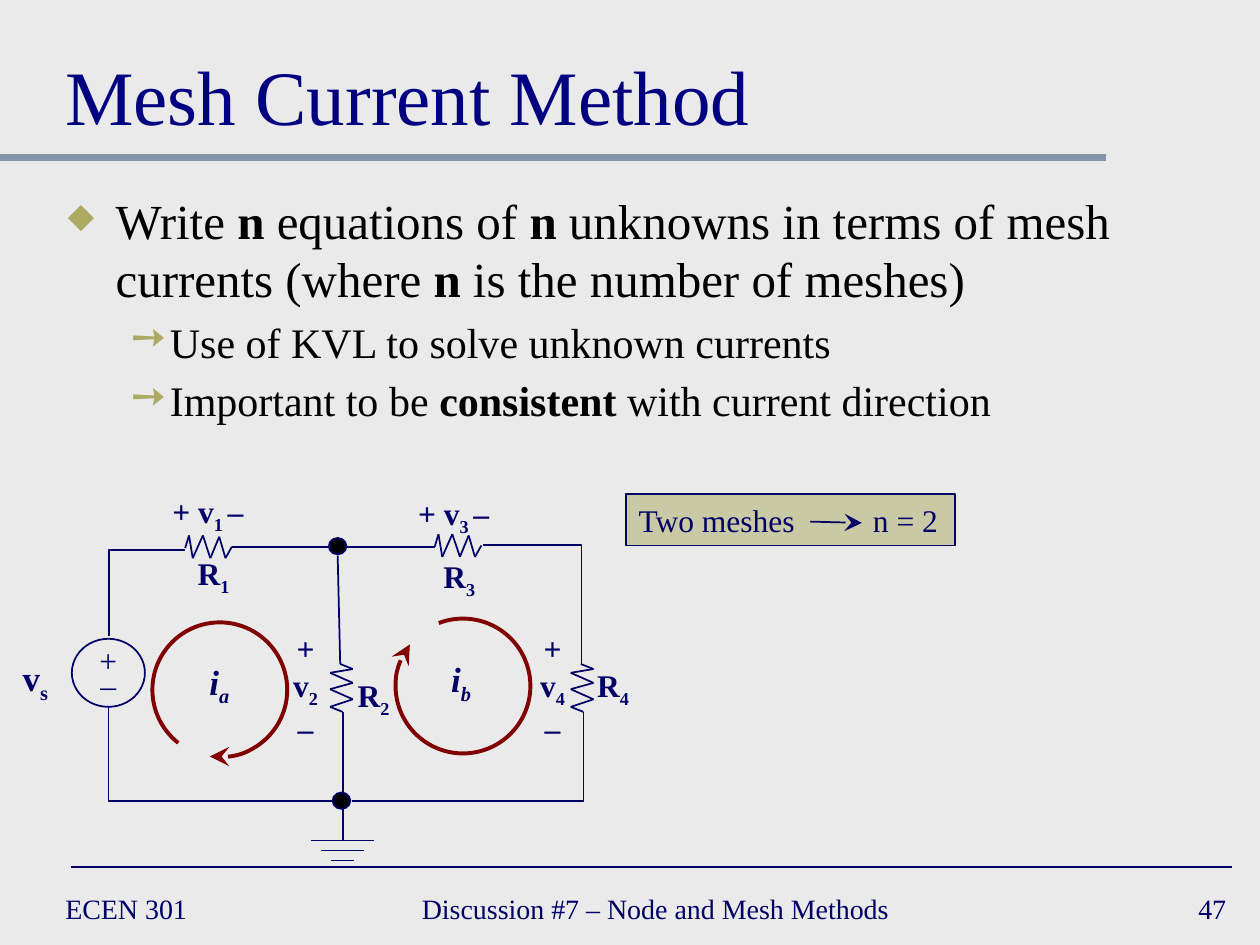
from lxml import etree
from pptx import Presentation, util as u
from pptx.dml import color as colors
from pptx.enum import shapes, text
from pptx.oxml import ns

FONT = "Times New Roman"
NAVY, OLIVE, MAROON, BLACK = "000066", "ACA964", "800000", "000000"
BOLD, SUBSCRIPT = {"bold": True}, {"baseline": -25000}
LEFT, CENTER, RIGHT = text.PP_ALIGN.LEFT, text.PP_ALIGN.CENTER, text.PP_ALIGN.RIGHT
TOP, MIDDLE, BOTTOM = text.MSO_ANCHOR.TOP, text.MSO_ANCHOR.MIDDLE, text.MSO_ANCHOR.BOTTOM
ACROSS = [(0, .1), (.03, 0), (.06, .18), (.14, 0), (.2, .18), (.27, .01), (.32, .18), (.37, .09)]
DOWN = [(.08, 0), (.18, .04), (0, .07), (.18, .15), (0, .2), (.18, .28), (0, .34), (.1, .38)]


def cm(inches):
    """Return a length in inches as a Cm value."""
    return u.Cm(inches * 2.54)


def rgb(value):
    """Return a colour from its hex string."""
    return colors.RGBColor.from_string(value)


def add_child(parent, tag, **attributes):
    """Append a DrawingML element with the given attributes."""
    child = etree.SubElement(parent, ns.qn(tag))
    for name, value in attributes.items():
        child.set(name, str(value))
    return child


def style_line(line, color=NAVY, width=1, arrow=False):
    """Set the colour, width and arrowhead of a line."""
    line.color.rgb = rgb(color)
    line.width = u.Pt(width)
    if arrow:
        add_child(line._get_or_add_ln(), "a:tailEnd", type="stealth", w="lg", len="lg")


def add_line(slide, start, end, **style):
    """Draw a straight line between two points."""
    ends = [cm(value) for value in (*start, *end)]
    connector = slide.shapes.add_connector(shapes.MSO_CONNECTOR.STRAIGHT, *ends)
    style_line(connector.line, **style)
    add_child(connector._element.spPr, "a:effectLst")


def add_bent(slide, box, preset="bentConnector2", adjust=None, **transform):
    """Draw a bent wire in a box that may be turned or flipped."""
    left, top, width, height = box
    ends = [cm(value) for value in (left, top, left + width, top + height)]
    connector = slide.shapes.add_connector(shapes.MSO_CONNECTOR.ELBOW, *ends)
    properties = connector._element.spPr
    geometry = properties.find(ns.qn("a:prstGeom"))
    geometry.set("prst", preset)
    if adjust:
        add_child(geometry.find(ns.qn("a:avLst")), "a:gd", name="adj1", fmla=f"val {adjust}")
    for name, value in transform.items():
        properties.find(ns.qn("a:xfrm")).set(name, str(value))
    style_line(connector.line)
    add_child(properties, "a:effectLst")


def add_zigzag(slide, left, top, offsets):
    """Draw a resistor as a chain of short lines."""
    points = [(left + x, top + y) for x, y in offsets]
    for start, end in zip(points, points[1:]):
        add_line(slide, start, end)


def add_preset(slide, preset, box, fill=None, **style):
    """Add a preset shape with an optional fill."""
    shape = slide.shapes.add_shape(preset, *map(cm, box))
    shape.shadow.inherit = False
    if fill:
        shape.fill.solid()
        shape.fill.fore_color.rgb = rgb(fill)
    else:
        shape.fill.background()
    style_line(shape.line, **style)
    return shape


def add_loop(slide, box, start, end):
    """Draw a mesh current arc, clockwise between two angles in degrees."""
    shape = add_preset(slide, shapes.MSO_SHAPE.ARC, box, color=MAROON, width=2.25, arrow=True)
    for index, angle in enumerate((start, end)):
        shape.adjustments[index] = angle * .6


def add_runs(paragraph, runs, size, color, **common):
    """Add runs, each a text with its own format values."""
    for wording, own in runs:
        run = paragraph.add_run()
        run.text = wording
        values = {"name": FONT, "size": u.Pt(size), **common, **own}
        baseline = values.pop("baseline", None)
        for name, value in values.items():
            setattr(run.font, name, value)
        run.font.color.rgb = rgb(color)
        if baseline:
            run._r.get_or_add_rPr().set("baseline", str(baseline))


def add_text(slide, box, lines, size=18, color=NAVY, align=CENTER, anchor=TOP, wrap=False, **common):
    """Add a text box with one list of runs for each paragraph."""
    frame = slide.shapes.add_textbox(*map(cm, box)).text_frame
    frame.word_wrap = wrap
    frame.vertical_anchor = anchor
    for index, runs in enumerate(lines):
        paragraph = frame.paragraphs[0] if index == 0 else frame.add_paragraph()
        paragraph.alignment = align
        add_runs(paragraph, runs, size, color, **common)
    return frame


def add_body(slide):
    """Add the bulleted text."""
    plain = {}
    lines = [
        [("Write ", plain), ("n", BOLD), (" equations of ", plain), ("n", BOLD),
         (" unknowns in terms of mesh currents (where ", plain), ("n", BOLD),
         (" is the number of meshes)", plain)],
        [("Use of KVL to solve unknown currents", plain)],
        [("Important to be ", plain), ("consistent", BOLD), (" with current direction", plain)],
    ]
    frame = add_text(slide, (.44, 1.46, 9.14, 2.07), lines, 24, BLACK, LEFT, wrap=True)
    for index, paragraph in enumerate(frame.paragraphs):
        level = min(index, 1)
        margin, hanging, mark, percent = [(.38, .38, "◆", 70), (.81, .31, "➙", 100)][level]
        properties = paragraph._p.get_or_add_pPr()
        properties.set("marL", str(cm(margin)))
        properties.set("indent", str(-cm(hanging)))
        add_child(add_child(properties, "a:buClr"), "a:srgbClr", val=OLIVE)
        add_child(properties, "a:buSzPct", val=percent * 1000)
        add_child(properties, "a:buChar", char=mark)
        paragraph.level = level
        if level:
            paragraph.space_before = u.Pt(4.8)
    for run in frame.paragraphs[0].runs:
        run.font.size = u.Pt(28)


def add_wires(slide):
    """Draw the wires, resistors, nodes, source and ground."""
    oval = shapes.MSO_SHAPE.OVAL
    for left, top in [(2.61, 4.27), (2.64, 6.29)]:
        add_preset(slide, oval, (left, top, .14, .13), BLACK)
    add_preset(slide, oval, (.57, 5.07, .58, .54))
    add_bent(slide, (.86, 5.61, 1.78, .75), rot=180 * 60000)
    add_bent(slide, (2.79, 5.65, 1.84, .71), flipV=1)
    add_bent(slide, (.83, 4.41, .67, .6), "bentConnector3", 101800, rot=270 * 60000)
    add_bent(slide, (3.75, 4.41, .95, .78), rot=90 * 60000, flipH=1)
    for start, end in [((2.72, 6.29), (2.72, 5.65)), ((2.68, 4.41), (2.7, 5.27)),
                       ((2.61, 4.34), (1.84, 4.34)), ((2.75, 4.34), (3.45, 4.34)),
                       ((2.72, 6.67), (2.72, 6.42))]:
        add_line(slide, start, end)
    for index, half in enumerate((.25, .17, .09)):
        height = 6.67 + .08 * index
        add_line(slide, (2.72 - half, height), (2.72 + half, height))
    for left, top, offsets in [(1.47, 4.25, ACROSS), (3.45, 4.24, ACROSS),
                               (2.62, 5.27, DOWN), (4.53, 5.27, DOWN)]:
        add_zigzag(slide, left, top, offsets)
    add_loop(slide, (1.21, 4.94, 1.07, 1.07), 128, 98.5)
    add_loop(slide, (3.14, 4.91, 1.07, 1.07), 249, 218)


def add_labels(slide):
    """Name the circuit's parts, voltages and currents."""
    for number, left, top in [("1", 1.46, 4.35), ("2", 2.73, 5.32), ("3", 3.41, 4.37), ("4", 4.63, 5.24)]:
        add_text(slide, (left, top, .47, .4), [[("R", {}), (number, SUBSCRIPT)]], bold=True)
    for number, left, top in [("1 ", 1.26, 3.86), ("3 ", 3.21, 3.87)]:
        add_text(slide, (left, top, .78, .4), [[("+ v", {}), (number, SUBSCRIPT), ("–", {})]], bold=True)
    for number, left in [("2", 2.22), ("4", 4.18)]:
        lines = [[("+", {})], [("v", {}), (number, SUBSCRIPT)], [("–", {})]]
        add_text(slide, (left, 4.94, .41, 1), lines, bold=True)
    for name, mark, left, top, italic in [("i", "a", 1.52, 5.19, True), ("i", "b", 3.44, 5.17, True),
                                          ("v", "s", .06, 5.16, False)]:
        add_text(slide, (left, top, .44, .43), [[(name, {}), (mark, SUBSCRIPT)]], 20, bold=True, italic=italic)
    for sign, top in [("+", 5.04), ("_", 5.15)]:
        add_text(slide, (.69, top, .34, .4), [[(sign, {})]])


def add_result(slide):
    """Add the box that counts the meshes."""
    shape = add_preset(slide, shapes.MSO_SHAPE.RECTANGLE, (4.97, 3.92, 2.61, .41), OLIVE)
    fill_color = shape._element.spPr.find(ns.qn("a:solidFill")).find(ns.qn("a:srgbClr"))
    add_child(fill_color, "a:alpha", val=50000)
    paragraph = shape.text_frame.paragraphs[0]
    paragraph.alignment = LEFT
    tabs = add_child(paragraph._p.get_or_add_pPr(), "a:tabLst")
    add_child(tabs, "a:tab", pos=cm(1.86), algn="l")
    add_runs(paragraph, [("Two meshes\tn = 2", {})], 18, NAVY)
    add_line(slide, (6.43, 4.14), (6.84, 4.15), arrow=True)


def main():
    """Build the slide and save it."""
    presentation = Presentation()
    presentation.slide_width, presentation.slide_height = cm(10), cm(7.5)
    slide = presentation.slides.add_slide(presentation.slide_layouts[6])
    slide.background.fill.solid()
    slide.background.fill.fore_color.rgb = rgb("EAEAEA")
    add_line(slide, (0, 1.25), (8.78, 1.25), color="8495A9", width=4)
    add_line(slide, (.56, 6.88), (9.78, 6.88))
    for wording, left, width, align in [("ECEN 301", .42, 2.17, LEFT), ("47", 7.75, 2.08, RIGHT),
                                        ("Discussion #7 – Node and Mesh Methods", 3.25, 4.2, LEFT)]:
        add_text(slide, (left, 7, width, .42), [[(wording, {})]], 16, align=align, anchor=MIDDLE, wrap=True)
    add_text(slide, (.42, .17, 9.17, 1), [[("Mesh Current Method", {})]], 44, "000080", LEFT, BOTTOM, True)
    add_body(slide)
    add_wires(slide)
    add_labels(slide)
    add_result(slide)
    presentation.save("out.pptx")


if __name__ == "__main__":
    main()
